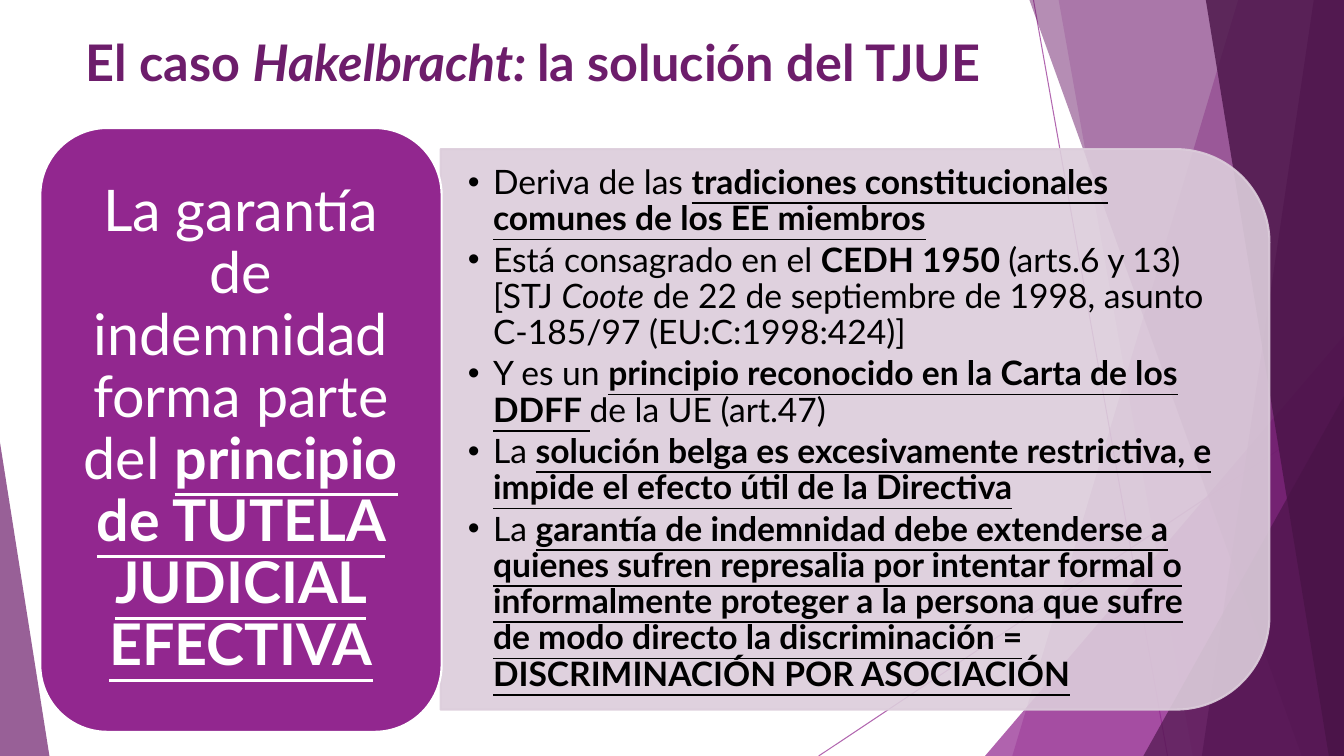
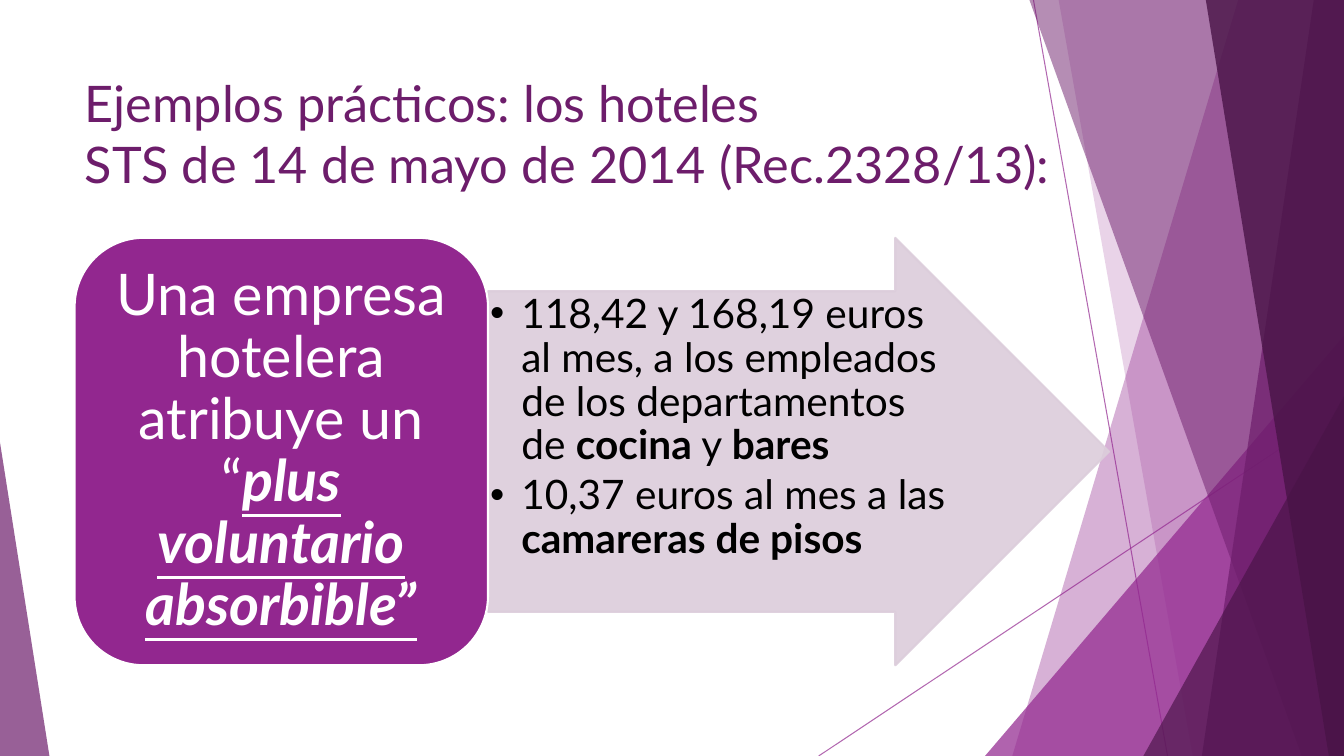
"""Two slides on the indemnity guarantee: a label card beside a panel of bullet points."""
import pptx
import pptx.util
import pptx.dml.color
import pptx.enum.shapes
import pptx.enum.text
import pptx.oxml
import pptx.oxml.ns

Inches, Pt = pptx.util.Inches, pptx.util.Pt
RGBColor = pptx.dml.color.RGBColor
SHAPE = pptx.enum.shapes.MSO_SHAPE
ANCHOR = pptx.enum.text.MSO_ANCHOR
ALIGN = pptx.enum.text.PP_ALIGN

PURPLE = RGBColor(0x92, 0x27, 0x8F)
PLUM = RGBColor(0x6D, 0x1D, 0x6B)
DARK = RGBColor(0x49, 0x14, 0x47)
LILAC = RGBColor(0xDC, 0xCD, 0xDB)
WHITE = RGBColor(0xFF, 0xFF, 0xFF)
BLACK = RGBColor(0, 0, 0)
FONT = "Lato"
WIDTH, HEIGHT = 13.33, 7.5
TITLE_SIZE, CARD_SIZE = 36, 41

RAYS = [((10.25, 0), (11.58, HEIGHT)), ((WIDTH, 4.03), (8.12, HEIGHT))]
# Each band reaches the right edge: top x, bottom x, colour, opacity. Each corner: box, apex, colour, opacity.
FACETS = [
    ("band", (12.28, 10.04), PURPLE, 36),
    ("band", (10.5, 11.83), PURPLE, 20),
    ("corner", (9.77, 3.33, 3.56, 1), PURPLE, 72),
    ("band", (10.21, 12.91), PLUM, 50),
    ("band", (13.03, 11.92), PLUM, 70),
    ("band", (11.96, 13.18), DARK, 80),
    ("corner", (11.34, 3.93, 1.99, 1), DARK, 66),
    ("corner", (0, 4.39, 0.49, 0), PLUM, 70),
]

SLIDES = [
    {
        "title": [[("El caso ", "b"), ("Hakelbracht: ", "bi"), ("la solución del TJUE", "b")]],
        "title_box": (0.75, 0.26, 10.29, 0.87),
        "card": [[("La garantía de indemnidad forma parte del ", ""),
                  ("principio de TUTELA JUDICIAL EFECTIVA", "bu")]],
        "card_box": (0.4, 1.27, 3.98, 5.99),
        "panel": {"kind": SHAPE.ROUND_2_SAME_RECTANGLE, "box": (5.7, 0.15, 5.56, 8.22), "rotation": 90},
        "points": [
            [("Deriva de las ", ""), ("tradiciones constitucionales comunes de los EE miembros", "bu")],
            [("Está consagrado en el ", ""), ("CEDH 1950 ", "b"), ("(arts.6 y 13) [STJ ", ""), ("Coote", "i"),
             (" de 22 de septiembre de 1998, asunto C-185/97 (EU:C:1998:424)]", "")],
            [("Y es un ", ""), ("principio reconocido en la Carta de los DDFF ", "bu"),
             ("de la UE (art.47)", "")],
            [("La ", ""), ("solución belga es excesivamente restrictiva, e impide el efecto útil "
                           "de la Directiva", "bu")],
            [("La ", ""), ("garantía de indemnidad debe extenderse a quienes sufren represalia por intentar "
                           "formal o informalmente proteger a la persona que sufre de modo directo la "
                           "discriminación = DISCRIMINACIÓN POR ASOCIACIÓN", "bu")],
        ],
        "points_box": (4.37, 1.75, 7.95, 5.02),
        "points_style": {"size": 24, "indent": 0.25, "insets": (0.27, 0.14), "anchor": ANCHOR.MIDDLE},
    },
    {
        "title": [[("Ejemplos prácticos: los hoteles", "")],
                  [("STS de 14 de mayo de 2014 (Rec.2328/13):", "")]],
        "title_box": (0.74, 0.67, 10.76, 1.44),
        "card": [[("Una empresa hotelera atribuye un “", ""), ("plus voluntario absorbible”", "biu")]],
        "card_box": (0.74, 2.36, 4.1, 4.24),
        "panel": {"kind": SHAPE.RIGHT_ARROW, "box": (4.84, 2.36, 6.16, 4.24), "adjustments": (0.75, 0.5)},
        "points": [
            [("118,42 y 168,19 euros al mes, a los empleados de los departamentos de ", ""),
             ("cocina", "b"), (" y ", ""), ("bares", "b")],
            [("10,37 euros al mes a las ", ""), ("camareras de pisos", "b")],
        ],
        "points_box": (4.84, 2.89, 4.56, 3.18),
        "points_style": {"size": 29, "indent": 0.31, "insets": (0.02, 0.02), "anchor": ANCHOR.TOP},
    },
]


def set_opacity(shape, percent):
    for color in shape.element.xpath(".//a:srgbClr"):
        alpha = pptx.oxml.parse_xml(f'<a:alpha {pptx.oxml.ns.nsdecls("a")} val="{percent * 1000}"/>')
        color.append(alpha)


def paint(shape, fill, line=None, opacity=100):
    shape.shadow.inherit = False
    shape.fill.solid()
    shape.fill.fore_color.rgb = fill
    if line is None:
        shape.line.fill.background()
    else:
        shape.line.color.rgb = line
        shape.line.width = Pt(1.5)
    if opacity < 100:
        set_opacity(shape, opacity)


def add_preset(slide, kind, box, adjustments=(), rotation=0):
    shape = slide.shapes.add_shape(kind, *map(Inches, box))
    for index, value in enumerate(adjustments):
        shape.adjustments[index] = value
    shape.rotation = rotation
    return shape


def place(shape, box):
    shape.left, shape.top, shape.width, shape.height = map(Inches, box)


def write(shape, paragraphs, size, color, align=ALIGN.LEFT, anchor=ANCHOR.TOP,
          insets=(0.1, 0.05), spacing=1.0, after=0, indent=None):
    frame = shape.text_frame
    frame.word_wrap = True
    frame.auto_size = pptx.enum.text.MSO_AUTO_SIZE.NONE
    frame.vertical_anchor = anchor
    frame.margin_left = frame.margin_right = Inches(insets[0])
    frame.margin_top = frame.margin_bottom = Inches(insets[1])
    for number, pieces in enumerate(paragraphs):
        paragraph = frame.add_paragraph() if number else frame.paragraphs[0]
        paragraph.alignment = align
        paragraph.line_spacing = spacing
        paragraph.space_before = Pt(0)
        paragraph.space_after = Pt(size * after)
        if indent:
            properties = paragraph._p.get_or_add_pPr()
            properties.set("marL", str(Inches(indent)))
            properties.set("indent", str(-Inches(indent)))
        for text, style in pieces:
            run = paragraph.add_run()
            run.text = text
            run.font.name, run.font.size = FONT, Pt(size)
            run.font.color.rgb = color
            run.font.bold, run.font.italic, run.font.underline = (key in style for key in "biu")


def add_ray(slide, start, end):
    ray = slide.shapes.add_connector(pptx.enum.shapes.MSO_CONNECTOR.STRAIGHT, *map(Inches, start + end))
    ray.line.color.rgb = PURPLE
    ray.line.width = Pt(0.75)
    set_opacity(ray, 70)
    effects = pptx.oxml.parse_xml(f'<a:effectLst {pptx.oxml.ns.nsdecls("a")}/>')
    ray.element.spPr.append(effects)
    return ray


def add_facet(slide, kind, geometry, color, opacity):
    if kind == "band":
        top, bottom = geometry
        outline = [(WIDTH, 0), (WIDTH, HEIGHT), (bottom, HEIGHT)]
        builder = slide.shapes.build_freeform(Inches(top), 0)
        builder.add_line_segments([(Inches(x), Inches(y)) for x, y in outline])
        facet = builder.convert_to_shape()
    else:
        left, top, width, apex = geometry
        facet = add_preset(slide, SHAPE.ISOSCELES_TRIANGLE, (left, top, width, HEIGHT - top), (apex,))
    paint(facet, color, opacity=opacity)
    return facet


def decorate_layout(layout, slide):
    """Draw the shared backdrop and move it to the layout."""
    backdrop = [add_ray(slide, *ray) for ray in RAYS]
    backdrop += [add_facet(slide, *facet) for facet in FACETS]
    for number, shape in enumerate(backdrop):
        shape.element.xpath(".//p:cNvPr")[0].set("id", str(100 + number))
        layout.shapes.element.insert(2 + number, shape.element)


def fill_slide(slide, content):
    title, points = slide.shapes.title, slide.placeholders[1]
    place(title, content["title_box"])
    write(title, content["title"], TITLE_SIZE, PLUM)

    panel = add_preset(slide, **content["panel"])
    paint(panel, LILAC, LILAC, 90)

    place(points, content["points_box"])
    write(points, content["points"], color=BLACK, spacing=0.9, after=0.15, **content["points_style"])
    slide.shapes.element.append(points.element)

    card = add_preset(slide, SHAPE.ROUNDED_RECTANGLE, content["card_box"])
    paint(card, PURPLE, WHITE)
    write(card, content["card"], CARD_SIZE, WHITE, ALIGN.CENTER, ANCHOR.MIDDLE, (0.17, 0.09), 0.9)


def main():
    presentation = pptx.Presentation()
    presentation.slide_width, presentation.slide_height = Inches(WIDTH), Inches(HEIGHT)
    layout = presentation.slide_layouts[1]
    slides = [presentation.slides.add_slide(layout) for _ in SLIDES]
    decorate_layout(layout, slides[0])
    for slide, content in zip(slides, SLIDES):
        fill_slide(slide, content)
    presentation.save("out.pptx")


if __name__ == "__main__":
    main()
